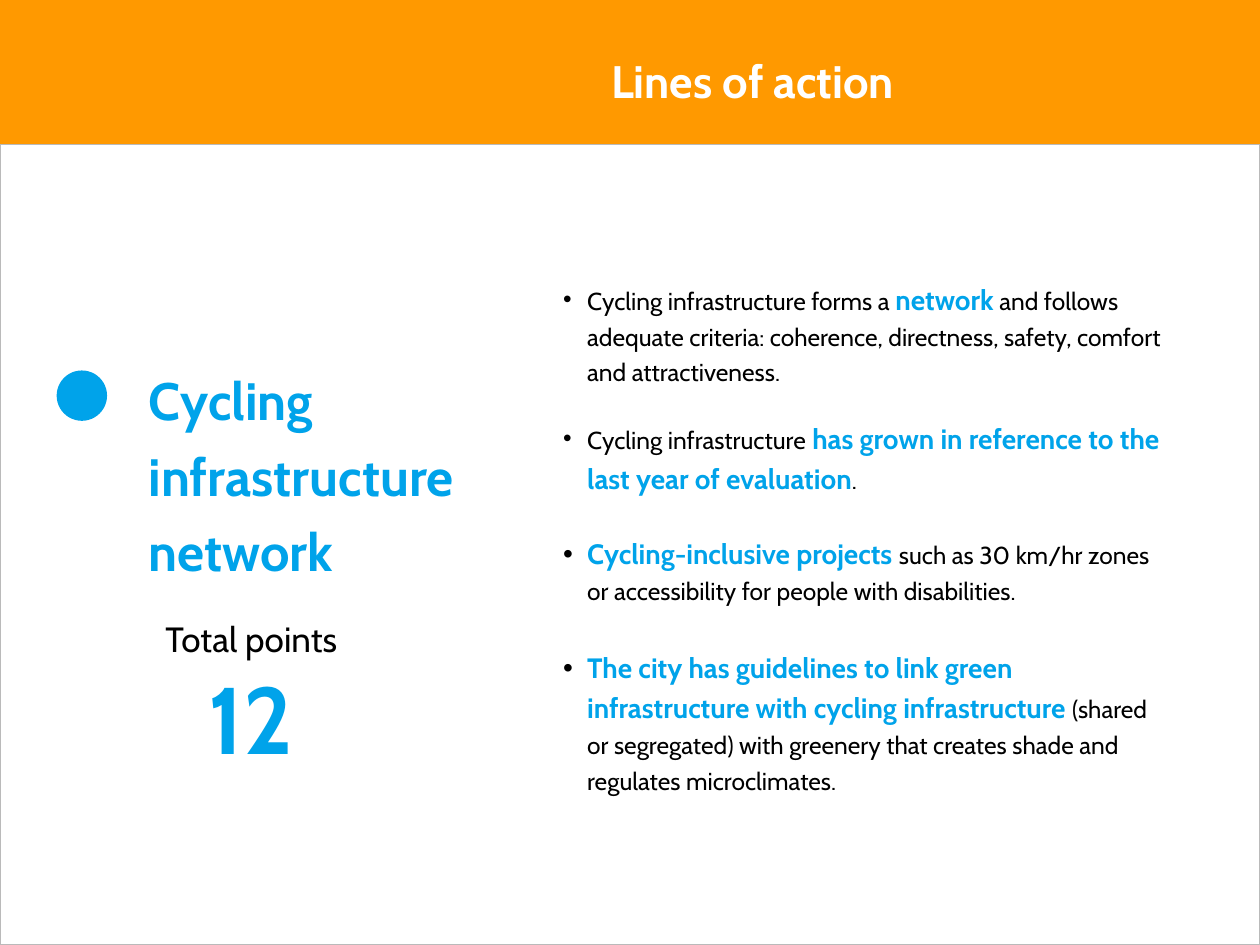
import pptx
import pptx.dml.color
import pptx.enum.shapes
import pptx.enum.text
import pptx.oxml
import pptx.oxml.ns
import pptx.util

WIDE, HIGH = 10, 7.5
FONT = "Cabin"
ORANGE, BLUE, BLACK, WHITE, GREY = "FF9900", "00A3EA", "000000", "FFFFFF", "BABABA"
SHAPE = pptx.enum.shapes.MSO_SHAPE
ALIGN = pptx.enum.text.PP_ALIGN
INDENT = 0.19

# Each point: space before in points, then (text, is key phrase) runs
POINTS = [
    (0, [("Cycling infrastructure forms a ", False), ("network", True),
         (" and follows adequate criteria: coherence, directness, safety, "
          "comfort and attractiveness.", False)]),
    (16, [("Cycling infrastructure", False),
          (" has grown in reference to the last year of evaluation", True),
          (".", False)]),
    (20, [("Cycling-inclusive projects ", True),
          ("such as 30 km/hr zones or accessibility for people with "
           "disabilities.", False)]),
    (22, [("The city has guidelines to link green infrastructure with "
           "cycling infrastructure ", True),
          ("(shared or segregated) with greenery that creates shade and "
           "regulates microclimates.", False)]),
]


def color(code):
    return pptx.dml.color.RGBColor.from_string(code)


def span(x, y, w, h):
    """Turn shares of the slide's size into lengths."""
    return [pptx.util.Inches(share * side)
            for share, side in ((x, WIDE), (y, HIGH), (w, WIDE), (h, HIGH))]


def block(slide, kind, box, fill, edge=None):
    shape = slide.shapes.add_shape(kind, *span(*box))
    shape.shadow.inherit = False
    shape.fill.solid()
    shape.fill.fore_color.rgb = color(fill)
    if edge:
        shape.line.color.rgb = color(edge)
        shape.line.width = pptx.util.Pt(1)
    else:
        shape.line.fill.background()


def frame(shape, box):
    """Place a text shape and return its frame, top-anchored and wrapping."""
    shape.left, shape.top, shape.width, shape.height = span(*box)
    text = shape.text_frame
    text.word_wrap = True
    text.auto_size = pptx.enum.text.MSO_AUTO_SIZE.NONE
    text.vertical_anchor = pptx.enum.text.MSO_ANCHOR.TOP
    return text


def label(slide, box):
    return frame(slide.shapes.add_textbox(*span(*box)), box)


def line(text, first, align=ALIGN.LEFT, lead=1.0, gap=0):
    para = text.paragraphs[0] if first else text.add_paragraph()
    para.alignment = align
    para.line_spacing = lead
    para.space_before = pptx.util.Pt(gap)
    return para


def write(para, words, size, tint, bold=False):
    run = para.add_run()
    run.text = words
    run.font.name = FONT
    run.font.size = pptx.util.Pt(size)
    run.font.bold = bold
    run.font.color.rgb = color(tint)


def bullet(para):
    props = para._p.get_or_add_pPr()
    inset = pptx.util.Inches(INDENT)
    props.set("marL", str(inset))
    props.set("indent", str(-inset))
    space = pptx.oxml.ns.nsdecls("a")
    for xml in (f'<a:buClr {space}><a:srgbClr val="{BLACK}"/></a:buClr>',
                f'<a:buChar {space} char="•"/>'):
        props.append(pptx.oxml.parse_xml(xml))


def listing(shape, box):
    text = frame(shape, box)
    for rank, (gap, runs) in enumerate(POINTS):
        para = line(text, rank == 0, lead=1.2, gap=gap)
        bullet(para)
        for words, key in runs:
            write(para, words, 16 if key else 14, BLUE if key else BLACK, key)


def main():
    deck = pptx.Presentation()
    deck.slide_width = pptx.util.Inches(WIDE)
    deck.slide_height = pptx.util.Inches(HIGH)
    slide = deck.slides.add_slide(deck.slide_layouts[1])
    title, body = slide.placeholders

    back = slide.background.fill
    back.solid()
    back.fore_color.rgb = color(ORANGE)
    block(slide, SHAPE.RECTANGLE, (0, 0.153, 1, 0.847), WHITE, GREY)
    block(slide, SHAPE.OVAL, (0.045, 0.392, 0.04, 0.0533), BLUE)

    # Bring the placeholders in front of the panel
    for shape in (title, body):
        slide.shapes._spTree.append(shape._element)

    head = frame(title, (0.195, 0.049, 0.805, 0.072))
    write(line(head, True, ALIGN.CENTER), "Lines of action", 26, WHITE, True)
    listing(body, (0.437, 0.285, 0.5, 0.615))

    topic = label(slide, (0.108, 0.363, 0.319, 0.165))
    topic.margin_top = topic.margin_bottom = pptx.util.Inches(0.1)
    write(line(topic, True, lead=1.2), "Cycling infrastructure network",
          30, BLUE, True)

    score = label(slide, (0.086, 0.647, 0.227, 0.18))
    write(line(score, True, ALIGN.CENTER), "Total points", 20, BLACK)
    write(line(score, False, ALIGN.CENTER), "12", 54, BLUE, True)

    deck.save("out.pptx")


if __name__ == "__main__":
    main()
